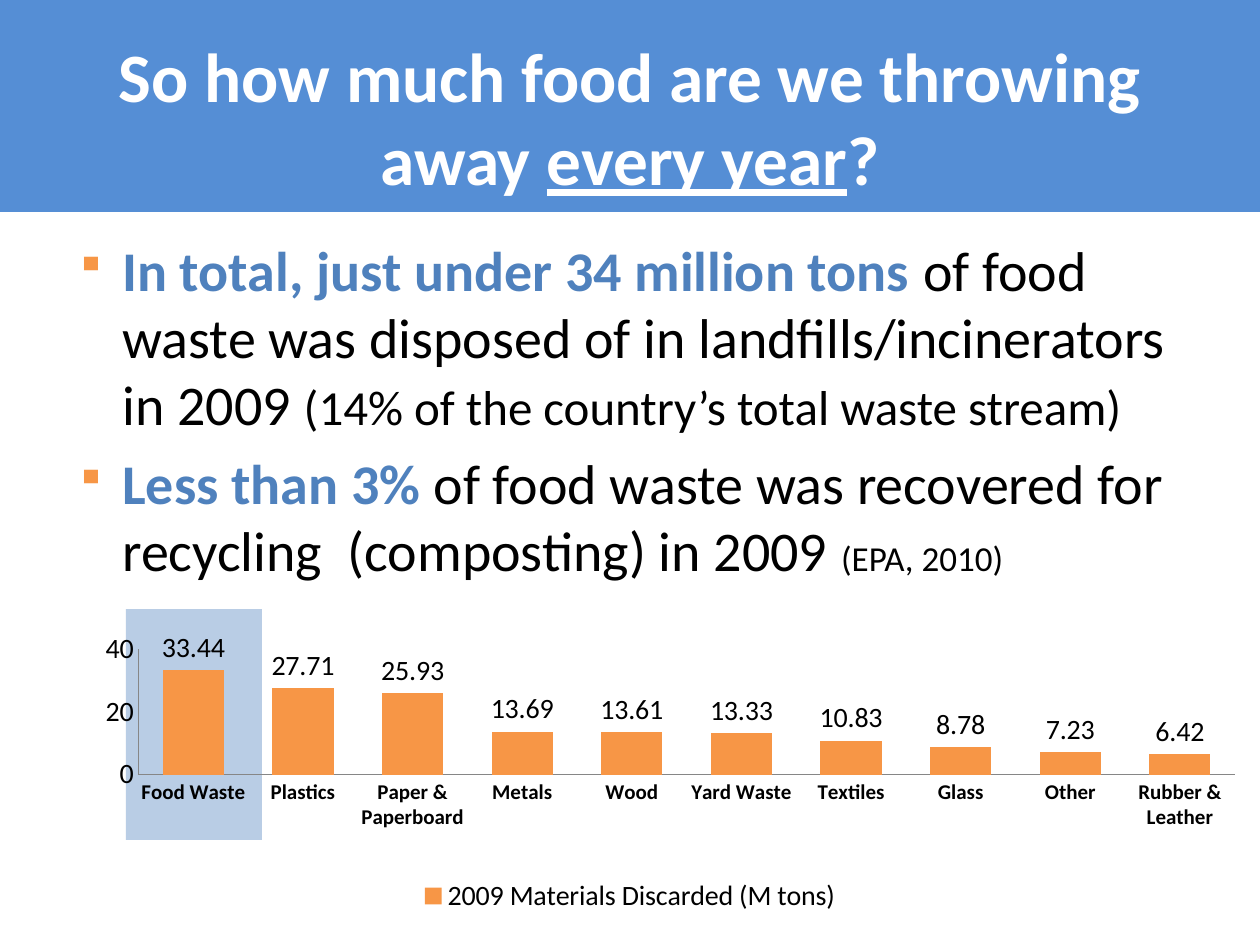
from lxml import etree
from pptx import Presentation
from pptx import util as u
from pptx.chart.data import CategoryChartData
from pptx.dml.color import RGBColor
from pptx.enum import chart as charts, shapes, text
from pptx.oxml import parse_xml
from pptx.oxml.ns import nsdecls, qn

COLORS = {"banner": "558ED5", "highlight": "B9CDE5", "accent": "F79646",
          "emphasis": "4F81BD", "black": "000000", "white": "FFFFFF", "axis": "868686"}


def px(length):
    return u.Emu(round(length * 914400 / 126))


def set_font(font, color, **values):
    font.color.rgb = RGBColor.from_string(COLORS[color])
    for name, value in {"name": "Calibri", **values}.items():
        setattr(font, name, value)


presentation = Presentation()
presentation.slide_width, presentation.slide_height = px(1260), px(945)
slide = presentation.slides.add_slide(presentation.slide_layouts[6])

rectangles = [("banner", (0, 0, 1260, 210)), ("highlight", (126, 609, 136, 231))]
for color, box in rectangles:
    shape = slide.shapes.add_shape(shapes.MSO_SHAPE.RECTANGLE, *map(px, box))
    shape.shadow.inherit = False
    shape.fill.solid()
    shape.fill.fore_color.rgb = RGBColor.from_string(COLORS[color])
    if color == "banner":
        shape.line.color.rgb = RGBColor.from_string(COLORS[color])
        shape.line.width = u.Pt(2)
    else:
        shape.line.fill.background()

materials = {"Food Waste": 33.44, "Plastics": 27.71, "Paper & Paperboard": 25.93,
             "Metals": 13.69, "Wood": 13.61, "Yard Waste": 13.33, "Textiles": 10.83,
             "Glass": 8.78, "Other": 7.23, "Rubber & Leather": 6.42}
data = CategoryChartData()
data.categories = list(materials)
data.add_series("2009 Materials Discarded (M tons)", list(materials.values()))
chart = slide.shapes.add_chart(charts.XL_CHART_TYPE.COLUMN_CLUSTERED,
                               *map(px, (0, 609, 1260, 368)), data).chart
set_font(chart.font, "black", size=u.Pt(16))
chart.has_title = False
chart.has_legend = True
chart.legend.position = charts.XL_LEGEND_POSITION.BOTTOM
chart.legend.include_in_layout = False

for axis in (chart.category_axis, chart.value_axis):
    axis.has_major_gridlines = False
    axis.major_tick_mark = charts.XL_TICK_MARK.NONE
    axis.format.line.color.rgb = RGBColor.from_string(COLORS["axis"])
set_font(chart.category_axis.tick_labels.font, "black", size=u.Pt(12), bold=True)
for name, value in {"minimum_scale": 0, "maximum_scale": 40, "major_unit": 20}.items():
    setattr(chart.value_axis, name, value)

plot = chart.plots[0]
plot.vary_by_categories = False
plot.gap_width = 79
plot.has_data_labels = True
plot.data_labels.show_value = True
plot.data_labels.position = charts.XL_LABEL_POSITION.OUTSIDE_END
bars = plot.series[0].format.fill
bars.solid()
bars.fore_color.rgb = RGBColor.from_string(COLORS["accent"])

chart_root = chart._chartSpace.chart
edges = {"xMode": "edge", "yMode": "edge"}
layouts = [
    (chart_root.plotArea, 0,
     {"layoutTarget": "inner", **edges, "x": 0.11, "y": 0.11, "w": 0.87, "h": 0.34}),
    (chart_root.find(qn("c:legend")), 1,
     {**edges, "x": 0.33, "y": 0.73, "w": 0.34, "h": 0.1}),
]
for parent, position, settings in layouts:
    for old_layout in parent.findall(qn("c:layout")):
        parent.remove(old_layout)
    layout = parse_xml(f'<c:layout {nsdecls("c")}><c:manualLayout/></c:layout>')
    for name, value in settings.items():
        etree.SubElement(layout[0], qn(f"c:{name}")).set("val", str(value))
    parent.insert(position, layout)

title_runs = [("So how much food are we throwing away ", "white", 39.6, True, False),
              ("every year", "white", 39.6, True, True),
              ("?", "white", 39.6, True, False)]
facts = [
    [("In total, just under 34 million tons ", "emphasis", 32, True, False),
     ("of food waste was disposed of in landfills/incinerators in 2009 ", "black", 32, False, False),
     ("(14% of the country’s total waste stream)", "black", 28, False, False)],
    [("Less than 3% ", "emphasis", 32, True, False),
     ("of food waste was recovered for recycling  (composting) in 2009 ", "black", 32, False, False),
     ("(EPA, 2010)", "black", 20, False, False)],
]
text_boxes = [((63, 38, 1134, 157), [title_runs], False),
              ((63, 220, 1134, 378), facts, True)]
for box, paragraphs, bulleted in text_boxes:
    frame = slide.shapes.add_textbox(*map(px, box)).text_frame
    frame.word_wrap = True
    frame.vertical_anchor = text.MSO_ANCHOR.MIDDLE
    for index, runs in enumerate(paragraphs):
        paragraph = frame.add_paragraph() if index else frame.paragraphs[0]
        paragraph.alignment = text.PP_ALIGN.LEFT if bulleted else text.PP_ALIGN.CENTER
        if index:
            paragraph.space_before = px(11)
        if bulleted:
            properties = paragraph._p.get_or_add_pPr()
            properties.set("marL", str(px(47)))
            properties.set("indent", str(px(-47)))
            bullet_color = etree.SubElement(properties, qn("a:buClr"))
            etree.SubElement(bullet_color, qn("a:srgbClr")).set("val", COLORS["accent"])
            etree.SubElement(properties, qn("a:buSzPct")).set("val", "75000")
            etree.SubElement(properties, qn("a:buChar")).set("char", "▪")
        for words, color, size, bold, underline in runs:
            run = paragraph.add_run()
            run.text = words
            set_font(run.font, color, size=u.Pt(size), bold=bold, underline=underline)

presentation.save("out.pptx")
